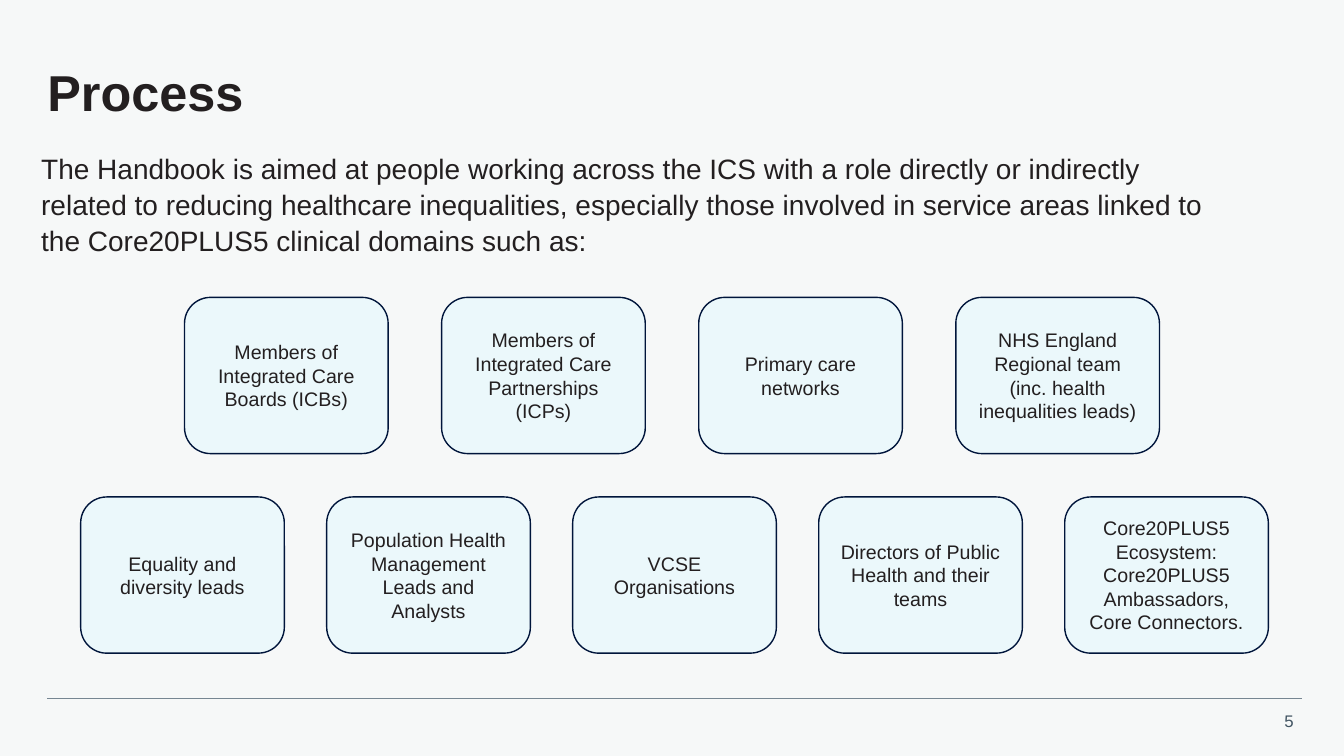
from pptx import Presentation
from pptx.dml.color import RGBColor
from pptx.enum.shapes import MSO_CONNECTOR, MSO_SHAPE
from pptx.enum.text import MSO_ANCHOR, MSO_AUTO_SIZE, PP_ALIGN
from pptx.oxml.ns import qn
from pptx.util import Inches, Pt
from lxml import etree

LEFT, CENTER, RIGHT = PP_ALIGN.LEFT, PP_ALIGN.CENTER, PP_ALIGN.RIGHT
TOP, MIDDLE = MSO_ANCHOR.TOP, MSO_ANCHOR.MIDDLE
ROUNDED, STRAIGHT = MSO_SHAPE.ROUNDED_RECTANGLE, MSO_CONNECTOR.STRAIGHT
NO_FIT = MSO_AUTO_SIZE.NONE

TITLE = "Process"
INTRO = (
    "The Handbook is aimed at people working across the ICS with a role "
    "directly or indirectly related to reducing healthcare inequalities, "
    "especially those involved in service areas linked to the Core20PLUS5 "
    "clinical domains such as:"
)
PAGE = "5"
# Each row: left edge, top, step between cards, card labels
ROWS = [
    (1.83, 2.95, 2.55, [
        "Members of Integrated Care Boards (ICBs)",
        "Members of Integrated Care Partnerships (ICPs)",
        "Primary care networks",
        "NHS England Regional team (inc. health inequalities leads)",
    ]),
    (0.8, 4.93, 2.44, [
        "Equality and diversity leads",
        "Population Health Management Leads and Analysts",
        "VCSE Organisations",
        "Directors of Public Health and their teams",
        "Core20PLUS5 Ecosystem: Core20PLUS5 Ambassadors, Core Connectors.",
    ]),
]
CARD_W, CARD_H = 2.02, 1.55


class Theme:
    font = "Arial"
    back = RGBColor.from_string("F6F8F8")
    text = RGBColor.from_string("231F20")
    page = RGBColor.from_string("425563")
    rule = RGBColor.from_string("768692")
    card = RGBColor.from_string("EBF8FB")
    edge = RGBColor.from_string("00153B")
    title_size, intro_size, card_size, page_size = 36, 20, 14, 12


def write(shape, text, size, color=Theme.text, bold=False, align=LEFT,
          anchor=TOP, spacing=1.0, after=0):
    frame = shape.text_frame
    frame.word_wrap = True
    frame.auto_size = NO_FIT
    frame.vertical_anchor = anchor
    frame.text = text
    para = frame.paragraphs[0]
    para.alignment = align
    para.line_spacing = spacing
    para.space_before, para.space_after = Pt(0), Pt(after)
    font = para.runs[0].font
    font.name, font.size, font.bold = Theme.font, Pt(size), bold
    font.color.rgb = color


def add_title(slide):
    title = slide.shapes.title
    title.left, title.top = Inches(0.47), Inches(0.47)
    title.width, title.height = Inches(12.47), Inches(0.95)
    frame = title.text_frame
    frame.margin_left = frame.margin_right = 0
    frame.margin_top = frame.margin_bottom = 0
    write(title, TITLE, Theme.title_size, bold=True, anchor=MIDDLE, spacing=0.9)


def add_text(slide, x, y, w, h, text, size, **style):
    box = slide.shapes.add_textbox(Inches(x), Inches(y), Inches(w), Inches(h))
    write(box, text, size, **style)


def add_card(slide, x, y, text):
    card = slide.shapes.add_shape(
        ROUNDED, Inches(x), Inches(y), Inches(CARD_W), Inches(CARD_H))
    card.shadow.inherit = False
    card.fill.solid()
    card.fill.fore_color.rgb = Theme.card
    card.line.color.rgb = Theme.edge
    card.line.width = Pt(1)
    write(card, text, Theme.card_size, align=CENTER, anchor=MIDDLE)


def add_rule(slide, x1, x2, y):
    rule = slide.shapes.add_connector(
        STRAIGHT, Inches(x1), Inches(y), Inches(x2), Inches(y))
    rule.line.color.rgb = Theme.rule
    rule.line.width = Pt(0.5)
    etree.SubElement(rule.element.spPr, qn("a:effectLst"))


def main():
    deck = Presentation()
    deck.slide_width, deck.slide_height = Inches(13.33), Inches(7.5)
    slide = deck.slides.add_slide(deck.slide_layouts.get_by_name("Title Only"))
    slide.background.fill.solid()
    slide.background.fill.fore_color.rgb = Theme.back

    add_title(slide)
    add_text(slide, 0.31, 1.43, 11.88, 1.16, INTRO, Theme.intro_size,
             spacing=1.07, after=8)
    for left, top, step, labels in ROWS:
        for i, label in enumerate(labels):
            add_card(slide, left + i * step, top, label)
    add_rule(slide, 0.47, 12.91, 6.93)
    add_text(slide, 12.52, 7, 0.41, 0.3, PAGE, Theme.page_size,
             color=Theme.page, align=RIGHT)
    deck.save("out.pptx")


if __name__ == "__main__":
    main()
